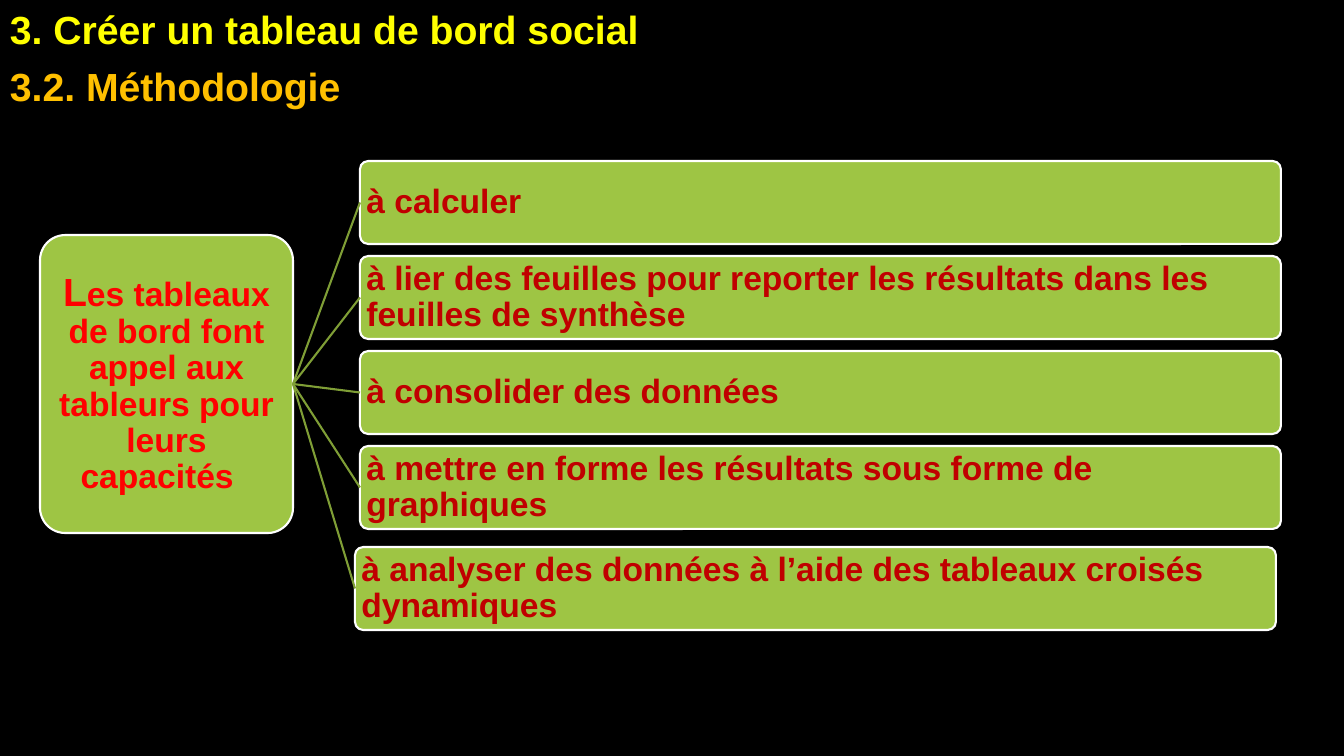
from pptx import Presentation
from pptx.dml.color import RGBColor
from pptx.enum.shapes import MSO_CONNECTOR, MSO_SHAPE
from pptx.enum.text import MSO_ANCHOR, PP_ALIGN
from pptx.oxml.ns import qn
from pptx.util import Pt
from lxml import etree

PX = 914400 / 100.8


def px(*lengths):
    return [round(n * PX) for n in lengths]


def add_text(p, text, size, color):
    r = p.add_run()
    r.text = text
    for name, value in {"name": "Arial", "size": Pt(size), "bold": True}.items():
        setattr(r.font, name, value)
    r.font.color.rgb = RGBColor.from_string(color)


prs = Presentation()
prs.slide_width, prs.slide_height = px(1344, 756)
s = prs.slides.add_slide(prs.slide_layouts[6])
s.background.fill.solid()
s.background.fill.fore_color.rgb = RGBColor.from_string("000000")

# Headings
headings = [
    ("3. Créer un tableau de bord social", 0, 1103, "FFFF00"),
    ("3.2. Méthodologie", 57, 355, "FFC000"),
]
for text, top, width, color in headings:
    tf = s.shapes.add_textbox(*px(0, top, width, 57)).text_frame
    tf.word_wrap = True
    add_text(tf.paragraphs[0], text, 28, color)

# Root box, then the five capacities; the last one sits apart
red, dark_red = "FF0000", "C00000"
left, top, step = 360, 161, 95
capacities = [
    "à calculer",
    "à lier des feuilles pour reporter les résultats dans les feuilles de synthèse",
    "à consolider des données",
    "à mettre en forme les résultats sous forme de graphiques",
]
boxes = [
    ((40, 235, 253, 298), 9, PP_ALIGN.CENTER, [
        ("L", 28, red),
        ("es tableaux de bord font appel aux tableurs pour leurs capacités  ", 24, red),
    ])
]
for i, text in enumerate(capacities):
    boxes.append(((left, top + step * i, 921, 83), 4, PP_ALIGN.LEFT, [(text, 24, dark_red)]))
boxes.append(((355, 547, 921, 83), 4, PP_ALIGN.LEFT, [
    ("à analyser des données à l’aide des tableaux croisés dynamiques", 24, dark_red),
]))

shapes = []
for place, inset, align, runs in boxes:
    sp = s.shapes.add_shape(MSO_SHAPE.ROUNDED_RECTANGLE, *px(*place))
    sp.adjustments[0] = 0.1
    sp.shadow.inherit = False
    sp.fill.solid()
    sp.fill.fore_color.rgb = RGBColor.from_string("9EC544")
    sp.line.color.rgb = RGBColor.from_string("FFFFFF")
    sp.line.width = Pt(1.5)
    tf = sp.text_frame
    tf.word_wrap = True
    tf.vertical_anchor = MSO_ANCHOR.MIDDLE
    for side in ("left", "top", "right", "bottom"):
        setattr(tf, f"margin_{side}", px(inset)[0])
    p = tf.paragraphs[0]
    p.alignment = align
    p.line_spacing = 0.9
    for run in runs:
        add_text(p, *run)
    shapes.append(sp)

# Links from the root to each capacity
root, *targets = shapes
for target in targets:
    link = s.shapes.add_connector(MSO_CONNECTOR.STRAIGHT, 0, 0, 0, 0)
    link.begin_connect(root, 3)
    link.end_connect(target, 1)
    link.line.color.rgb = RGBColor.from_string("7F9E36")
    link.line.width = Pt(1.5)
    etree.SubElement(link._element.spPr, qn("a:effectLst"))

prs.save("out.pptx")
